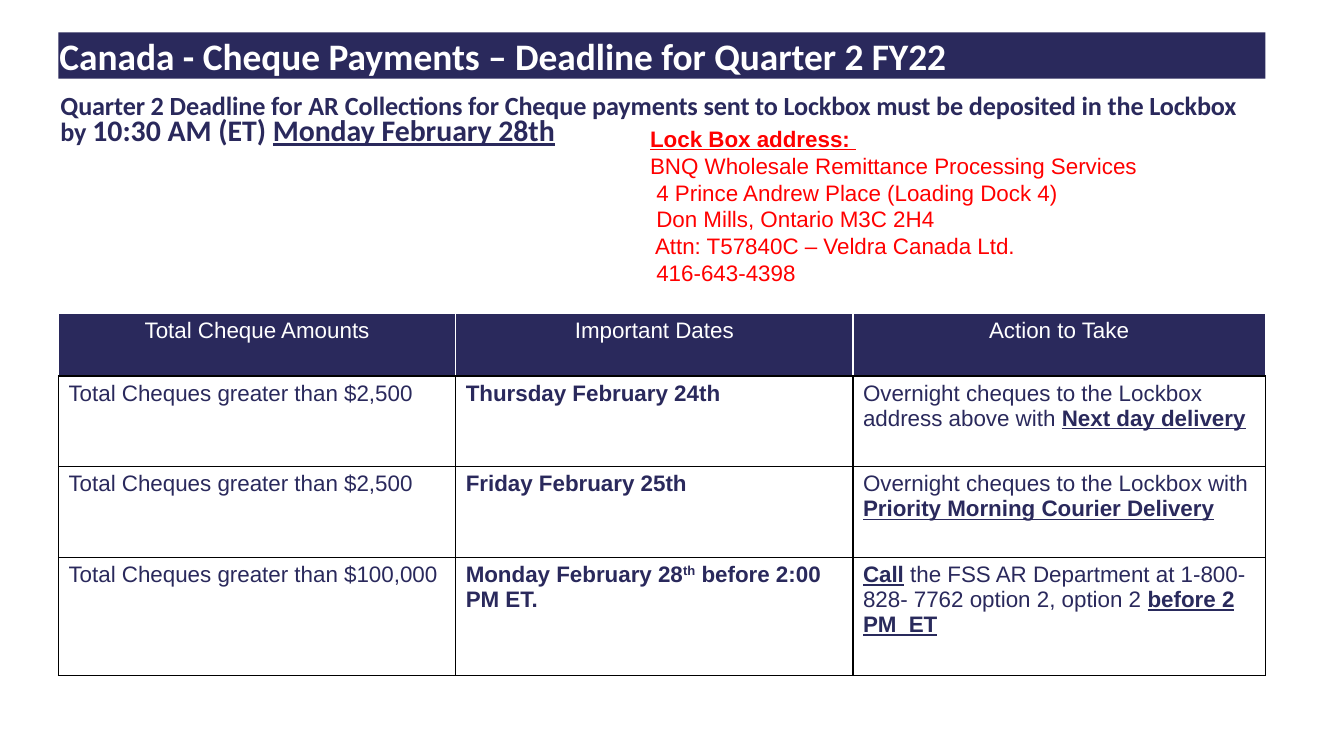
from dataclasses import dataclass

from lxml.etree import SubElement
from pptx import Presentation
from pptx.dml.color import RGBColor
from pptx.enum.text import MSO_ANCHOR as Anchor, PP_ALIGN as Align
from pptx.oxml import parse_xml
from pptx.oxml.ns import nsdecls, qn
from pptx.util import Emu, Pt

PX = 9144
NAVY = RGBColor(0x2A, 0x29, 0x5C)
INDIGO = RGBColor(0x29, 0x2A, 0x5C)
WHITE = RGBColor(0xFF, 0xFF, 0xFF)
RED = RGBColor(0xFF, 0x00, 0x00)
BLACK = RGBColor(0x00, 0x00, 0x00)


@dataclass(frozen=True)
class Span:
    text: str
    bold: bool = False
    underline: bool = False
    raised: bool = False
    size: float = 16
    color: RGBColor = NAVY
    font: str = "Arial"
    spacing: int = 0


@dataclass(frozen=True)
class Deadline:
    amount: list[Span]
    date: list[Span]
    action: list[Span]


def px(length: int) -> Emu:
    return Emu(length * PX)


def write(paragraph, text: str, *, size: float = 16, color: RGBColor = NAVY,
          font: str = "Arial", bold: bool = False, underline: bool = False,
          raised: bool = False, spacing: int = 0) -> None:
    run = paragraph.add_run()
    run.text = text
    run.font.size, run.font.name = Pt(size), font
    run.font.bold, run.font.underline = bold, underline
    run.font.color.rgb = color
    properties = run.font._element
    if raised:
        properties.set("baseline", "30000")
    if spacing:
        properties.set("spc", str(spacing))


def write_spans(paragraph, spans: list[Span]) -> None:
    for span in spans:
        write(paragraph, span.text, size=span.size, color=span.color,
              font=span.font, bold=span.bold, underline=span.underline,
              raised=span.raised, spacing=span.spacing)


def place(shape, left: int, top: int, width: int, height: int) -> None:
    shape.left, shape.top = px(left), px(top)
    shape.width, shape.height = px(width), px(height)


def fill_band(shape, color: RGBColor) -> None:
    shape.fill.solid()
    shape.fill.fore_color.rgb = color
    frame = shape.text_frame
    frame.word_wrap = True
    frame.vertical_anchor = Anchor.TOP
    frame.margin_left = frame.margin_right = frame.margin_bottom = 0
    frame.margin_top = px(1)
    frame.paragraphs[0].alignment = Align.LEFT
    frame.paragraphs[0].space_before = Pt(1)


def set_borders(cell, sides: RGBColor, top: RGBColor) -> None:
    properties = cell._tc.get_or_add_tcPr()
    edges = {"lnL": sides, "lnR": sides, "lnT": top, "lnB": BLACK}
    for position, (edge, color) in enumerate(edges.items()):
        line = parse_xml(f'<a:{edge} {nsdecls("a")} w="12700"/>')
        solid = SubElement(line, qn("a:solidFill"))
        SubElement(solid, qn("a:srgbClr"), val=str(color))
        properties.insert(position, line)


HEADINGS = ["Total Cheque Amounts", "Important Dates", "Action to Take"]
COLUMN_WIDTHS = [394, 394, 409]
ROW_HEIGHTS = [62, 90, 90, 117]

ADDRESS = [
    "BNQ Wholesale Remittance Processing Services",
    " 4 Prince Andrew Place (Loading Dock 4)",
    " Don Mills, Ontario M3C 2H4",
    " Attn: T57840C – Veldra Canada Ltd.",
    " 416-643-4398",
]

NOTICE = [
    Span("Quarter 2 Deadline ", True, size=18.7, font="Calibri", spacing=-10),
    Span("for AR ", True, size=18.7, font="Calibri"),
    Span("Collections for Cheque payments sent to Lockbox must be deposited in the Lockbox by ",
         True, size=18.7, font="Calibri", spacing=-10),
    Span("10:30 AM (ET) ", True, size=21.3, font="Calibri"),
    Span("Monday February 28th", True, True, size=21.3, font="Calibri"),
]

DEADLINES = [
    Deadline(
        [Span("Total Cheques greater than $2,500")],
        [Span("Thursday February 24th", True)],
        [Span("Overnight cheques to the Lockbox address above with "),
         Span("Next day delivery", True, True)]),
    Deadline(
        [Span("Total Cheques greater than $2,500")],
        [Span("Friday February 25th", True)],
        [Span("Overnight cheques to the Lockbox with "),
         Span("Priority Morning Courier Delivery", True, True)]),
    Deadline(
        [Span("Total Cheques greater than $100,000")],
        [Span("Monday February 28", True), Span("th", True, raised=True),
         Span(" before 2:00 PM ET.", True)],
        [Span("Call", True, True, color=INDIGO),
         Span(" the FSS AR Department at 1-800-828- 7762 option 2, option 2 "),
         Span("before 2 PM  ET", True, True, color=INDIGO)]),
]


def add_heading(slide) -> None:
    heading = slide.shapes.title
    place(heading, 58, 32, 1197, 46)
    fill_band(heading, NAVY)
    line = heading.text_frame.paragraphs[0]
    line._p.get_or_add_pPr().set("marL", str(px(1)))
    write(line, "Canada - Cheque Payments – Deadline for Quarter 2 FY22",
          size=26.7, color=WHITE, font="Calibri", bold=True, spacing=-5)


def add_notice(slide) -> None:
    notice = slide.shapes.add_textbox(px(60), px(92), px(1197), px(56))
    fill_band(notice, WHITE)
    line = notice.text_frame.paragraphs[0]
    line.line_spacing = Pt(19.1)
    write_spans(line, NOTICE)


def add_address(slide) -> None:
    address = slide.shapes.add_textbox(px(635), px(119), px(546), px(172))
    frame = address.text_frame
    frame.word_wrap = True
    write(frame.paragraphs[0], "Lock Box address: ", color=RED, bold=True, underline=True)
    for line in ADDRESS:
        write(frame.add_paragraph(), line, color=RED)


def add_deadlines(slide) -> None:
    schedule = slide.shapes.add_table(
        len(ROW_HEIGHTS), len(COLUMN_WIDTHS), px(58), px(311),
        px(sum(COLUMN_WIDTHS)), px(sum(ROW_HEIGHTS))).table
    schedule.first_row = schedule.horz_banding = False
    for column, width in zip(schedule.columns, COLUMN_WIDTHS):
        column.width = px(width)
    for row, height in zip(schedule.rows, ROW_HEIGHTS):
        row.height = px(height)
    for cell, label in zip(schedule.rows[0].cells, HEADINGS):
        cell.fill.solid()
        cell.fill.fore_color.rgb = NAVY
        set_borders(cell, WHITE, WHITE)
        cell.text_frame.paragraphs[0].alignment = Align.CENTER
        write(cell.text_frame.paragraphs[0], label, color=WHITE)
    for index, deadline in enumerate(DEADLINES, start=1):
        contents = (deadline.amount, deadline.date, deadline.action)
        for cell, spans in zip(schedule.rows[index].cells, contents):
            cell.fill.background()
            set_borders(cell, BLACK, BLACK)
            write_spans(cell.text_frame.paragraphs[0], spans)


def main() -> None:
    deck = Presentation()
    deck.slide_width, deck.slide_height = px(1333), px(750)
    slide = deck.slides.add_slide(deck.slide_layouts[5])
    add_heading(slide)
    add_notice(slide)
    add_address(slide)
    add_deadlines(slide)
    deck.save("out.pptx")


if __name__ == "__main__":
    main()
